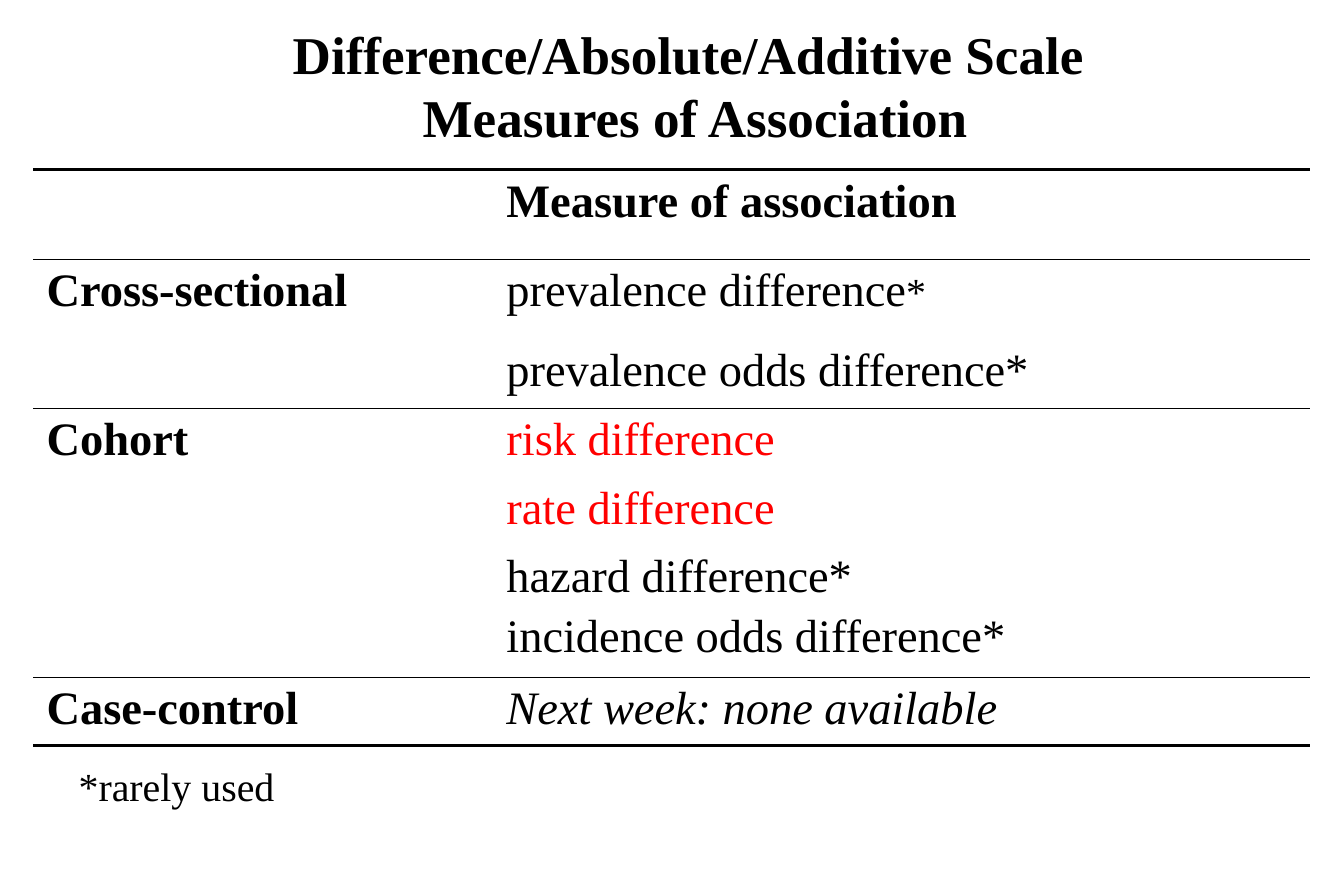
"""Build the slide on difference-scale measures of association."""
from dataclasses import dataclass

from lxml.etree import SubElement
from pptx import Presentation
from pptx.dml.color import RGBColor as Rgb
from pptx.enum.text import MSO_ANCHOR as Anchor, PP_ALIGN as Align
from pptx.oxml.ns import qn
from pptx.util import Inches, Pt


@dataclass(frozen=True)
class Theme:
    """Typeface, colours and type sizes."""
    font: str = "Times New Roman"
    ink: str = "000000"
    accent: str = "FF0000"
    title: float = 32
    body: float = 28
    note: float = 24
    thick: float = 2.25
    thin: float = 1


THEME = Theme()


@dataclass(frozen=True)
class Span:
    """A piece of text in one style."""
    text: str
    size: float = THEME.body
    bold: bool = False
    italic: bool = False
    color: str = THEME.ink


@dataclass(frozen=True)
class Row:
    """A table row with a design, its measures and its rules."""
    height: float
    design: str
    measures: tuple[tuple[Span, ...], ...]
    top: float = 0
    bottom: float = 0


ROWS = (
    Row(0.75, "", ((Span("Measure of association", bold=True),),), THEME.thick, THEME.thin),
    Row(0.67, "Cross-sectional",
        ((Span("prevalence difference"), Span("*", THEME.note)),), top=THEME.thin),
    Row(0.58, "", ((Span("prevalence odds difference*"),),), bottom=THEME.thin),
    Row(0.57, "Cohort", ((Span("risk difference", color=THEME.accent),),), top=THEME.thin),
    Row(0.57, "", ((Span("rate difference", color=THEME.accent),),)),
    Row(1.03, "", ((Span("hazard difference*"),), (Span("incidence odds difference*"),)),
        bottom=THEME.thin),
    Row(0.57, "Case-control", ((Span("Next week: none available", italic=True),),),
        THEME.thin, THEME.thick),
)
COLUMNS = (3.56, 0.29, 6.84)


def write(frame, lines: tuple[tuple[Span, ...], ...], align=Align.LEFT,
          space_percent: int = 0) -> None:
    """Fill a text frame with one paragraph per line."""
    for index, (first, *others) in enumerate(lines):
        para = frame.add_paragraph() if index else frame.paragraphs[0]
        para.text = first.text
        para.alignment = align
        if space_percent:
            space = SubElement(para._p.get_or_add_pPr(), qn("a:spcBef"))
            SubElement(space, qn("a:spcPct"), val=str(space_percent * 1000))
        styles = [first] * len(para.runs) + others
        for span in others:
            para.add_run().text = span.text
        for run, span in zip(para.runs, styles):
            font = run.font
            font.name, font.size = THEME.font, Pt(span.size)
            font.bold, font.italic = span.bold, span.italic
            font.color.rgb = Rgb.from_string(span.color)


def add_text(page, box: tuple[float, ...], line: Span,
             align=Align.LEFT, anchor=Anchor.TOP) -> None:
    """Add a wrapped text box."""
    frame = page.shapes.add_textbox(*map(Inches, box)).text_frame
    frame.word_wrap = True
    frame.vertical_anchor = anchor
    write(frame, ((line,),), align)


def set_borders(cell, top: float, bottom: float) -> None:
    """Draw the top and bottom rules of a cell and clear its sides."""
    properties = cell._tc.get_or_add_tcPr()
    for side, width in (("L", 0), ("R", 0), ("T", top), ("B", bottom)):
        line = SubElement(properties, qn(f"a:ln{side}"), w=str(Pt(width)))
        if width:
            fill = SubElement(line, qn("a:solidFill"))
            SubElement(fill, qn("a:srgbClr"), val=THEME.ink)
        else:
            SubElement(line, qn("a:noFill"))


def add_measures(page, left: float, top: float) -> None:
    """Add the table of study designs and their measures."""
    size = sum(COLUMNS), sum(row.height for row in ROWS)
    table = page.shapes.add_table(
        len(ROWS), len(COLUMNS), *map(Inches, (left, top, *size))).table
    table.first_row = table.horz_banding = False
    for column, width in zip(table.columns, COLUMNS):
        column.width = Inches(width)
    for table_row, row in zip(table.rows, ROWS):
        table_row.height = Inches(row.height)
        for cell in table_row.cells:
            set_borders(cell, row.top, row.bottom)
            cell.fill.background()
            cell.margin_left = cell.margin_right = Inches(0.11)
        design, _, measure = table_row.cells
        if row.design:
            write(design.text_frame, ((Span(row.design, bold=True),),), space_percent=20)
        write(measure.text_frame, row.measures, space_percent=20)


def main() -> None:
    """Build and save the deck."""
    deck = Presentation()
    deck.slide_width, deck.slide_height = Inches(11.25), Inches(7.5)
    page = deck.slides.add_slide(deck.slide_layouts[6])
    heading = Span("Difference/Absolute/Additive Scale\v Measures of Association",
                   THEME.title, bold=True)
    add_text(page, (0.75, 0.17, 10.03, 1.08), heading, Align.CENTER, Anchor.MIDDLE)
    add_measures(page, 0.28, 1.42)
    add_text(page, (0.56, 6.33, 4.22, 0.5), Span("*rarely used", THEME.note))
    deck.save("out.pptx")


if __name__ == "__main__":
    main()
